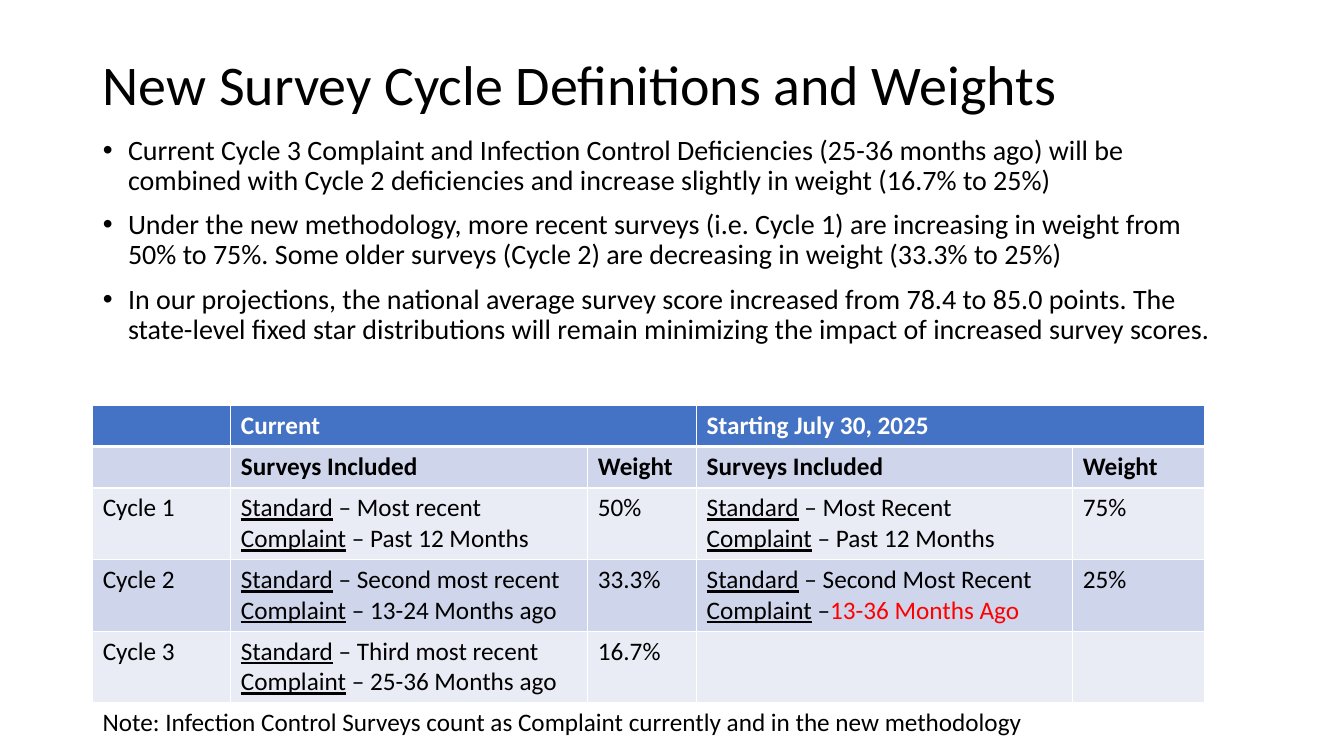
from lxml.etree import SubElement
from pptx import Presentation
from pptx.dml.color import RGBColor
from pptx.enum.text import MSO_ANCHOR, MSO_AUTO_SIZE, PP_ALIGN
from pptx.oxml.ns import qn
from pptx.util import Inches, Pt

BLACK, WHITE, RED = "000000", "FFFFFF", "FF0000"
HEADER, DARK_BAND, LIGHT_BAND = "4472C4", "CFD5EA", "E9EBF5"
LEFT = 6.9
COLUMNS = [10.28, 26.56, 8.1, 27.98, 9.83]
ROWS = [5.47] * 2 + [9.47] * 3

BULLETS = [
    "Current Cycle 3 Complaint and Infection Control Deficiencies (25-36 months ago) will be "
    "combined with Cycle 2 deficiencies and increase slightly in weight (16.7% to 25%)",
    "Under the new methodology, more recent surveys (i.e. Cycle 1) are increasing in weight from "
    "50% to 75%. Some older surveys (Cycle 2) are decreasing in weight (33.3% to 25%)",
    "In our projections, the national average survey score increased from 78.4 to 85.0 points. The "
    "state-level fixed star distributions will remain minimizing the impact of increased survey scores.",
]


def colour(hex_code):
    return RGBColor.from_string(hex_code)


def surveys(standard, complaint, *changed):
    """Two lines of runs; any changed text follows the complaint line in red."""
    return [["Standard", standard], ["Complaint", complaint, *changed]]


CELLS = [
    ["", "Current", "", "Starting July 30, 2025", ""],
    ["", "Surveys Included", "Weight", "Surveys Included", "Weight"],
    ["Cycle 1", surveys(" – Most recent", " – Past 12 Months"), "50%",
     surveys(" – Most Recent", " – Past 12 Months"), "75%"],
    ["Cycle 2", surveys(" – Second most recent", " – 13-24 Months ago"), "33.3%",
     surveys(" – Second Most Recent", " –", "13-36 Months Ago"), "25%"],
    ["Cycle 3", surveys(" – Third most recent", " – 25-36 Months ago"), "16.7%", "", ""],
]


class SlideBuilder:
    """Places elements by percentages of the slide's width and height."""

    font = "Calibri"

    def __init__(self, prs):
        self.width, self.height = prs.slide_width, prs.slide_height
        self.slide = prs.slides.add_slide(prs.slide_layouts[1])

    def x(self, share):
        return int(self.width * share / 100)

    def y(self, share):
        return int(self.height * share / 100)

    def box(self, left, top, width, height):
        return self.x(left), self.y(top), self.x(width), self.y(height)

    def style(self, p, size, hex_code=BLACK, bold=False):
        for r in p.runs:
            r.font.name, r.font.size, r.font.bold = self.font, Pt(size), bold
            r.font.color.rgb = colour(hex_code)

    def placeholder(self, sp, box, anchor):
        sp.left, sp.top, sp.width, sp.height = box
        tf = sp.text_frame
        tf.word_wrap, tf.auto_size = True, MSO_AUTO_SIZE.NONE
        tf.vertical_anchor = anchor
        return tf

    def title(self, text, box):
        tf = self.placeholder(self.slide.shapes.title, box, MSO_ANCHOR.MIDDLE)
        tf.text = text
        p = tf.paragraphs[0]
        p.alignment, p.line_spacing = PP_ALIGN.LEFT, 0.9
        self.style(p, 40)

    def bullets(self, items, box):
        tf = self.placeholder(self.slide.placeholders[1], box, MSO_ANCHOR.TOP)
        for i, item in enumerate(items):
            p = tf.add_paragraph() if i else tf.paragraphs[0]
            p.text = item
            p.line_spacing, p.space_before = 0.9, Pt(10 if i else 0)
            pPr = p._p.get_or_add_pPr()
            pPr.set("marL", str(Inches(0.25)))
            pPr.set("indent", str(-Inches(0.25)))
            SubElement(pPr, qn("a:buFont"), typeface="Arial")
            SubElement(pPr, qn("a:buChar"), char="•")
            self.style(p, 20)

    def note(self, text, box):
        tf = self.slide.shapes.add_textbox(*box).text_frame
        tf.word_wrap = True
        tf.text = text
        self.style(tf.paragraphs[0], 18)

    def borders(self, cell, **widths):
        """Draw white edges; widths maps L, R, T and B to points."""
        tcPr = cell._tc.get_or_add_tcPr()
        for side, points in widths.items():
            ln = SubElement(tcPr, qn(f"a:ln{side}"), w=str(Pt(points)))
            fill = SubElement(ln, qn("a:solidFill"))
            SubElement(fill, qn("a:srgbClr"), val=WHITE)

    def cell_text(self, cell, content, hex_code, bold):
        tf = cell.text_frame
        if isinstance(content, str):
            tf.text = content
            self.style(tf.paragraphs[0], 18, hex_code, bold)
            return
        for i, line in enumerate(content):
            p = tf.add_paragraph() if i else tf.paragraphs[0]
            for text in line:
                p.add_run().text = text
            self.style(p, 18, hex_code, bold)
            p.runs[0].font.underline = True
            for r in p.runs[2:]:
                r.font.color.rgb = colour(RED)

    def table(self, rows, left, top):
        box = self.box(left, top, sum(COLUMNS), sum(ROWS))
        table = self.slide.shapes.add_table(len(ROWS), len(COLUMNS), *box).table
        for column, share in zip(table.columns, COLUMNS):
            column.width = self.x(share)
        for row, share in zip(table.rows, ROWS):
            row.height = self.y(share)
        for i, row in enumerate(rows):
            band = HEADER if i == 0 else DARK_BAND if i % 2 else LIGHT_BAND
            for j, content in enumerate(row):
                cell = table.cell(i, j)
                self.borders(cell, L=1, R=1, T=3 if i == 1 else 1, B=1 if i else 3)
                cell.fill.solid()
                cell.fill.fore_color.rgb = colour(band)
                self.cell_text(cell, content, BLACK if i else WHITE, i < 2)
        for j in (1, 3):
            table.cell(0, j).merge(table.cell(0, j + 1))


def main():
    prs = Presentation()
    prs.slide_width, prs.slide_height = Inches(13.33), Inches(7.5)
    s = SlideBuilder(prs)
    s.title("New Survey Cycle Definitions and Weights", s.box(LEFT, 1.87, 76.67, 19.33))
    s.bullets(BULLETS, s.box(LEFT, 17.33, 84.32, 37.6))
    s.table(CELLS, LEFT, 53.6)
    s.note("Note: Infection Control Surveys count as Complaint currently and in the new methodology",
           s.box(LEFT, 92.8, 87.85, 5.33))
    prs.save("out.pptx")


if __name__ == "__main__":
    main()
